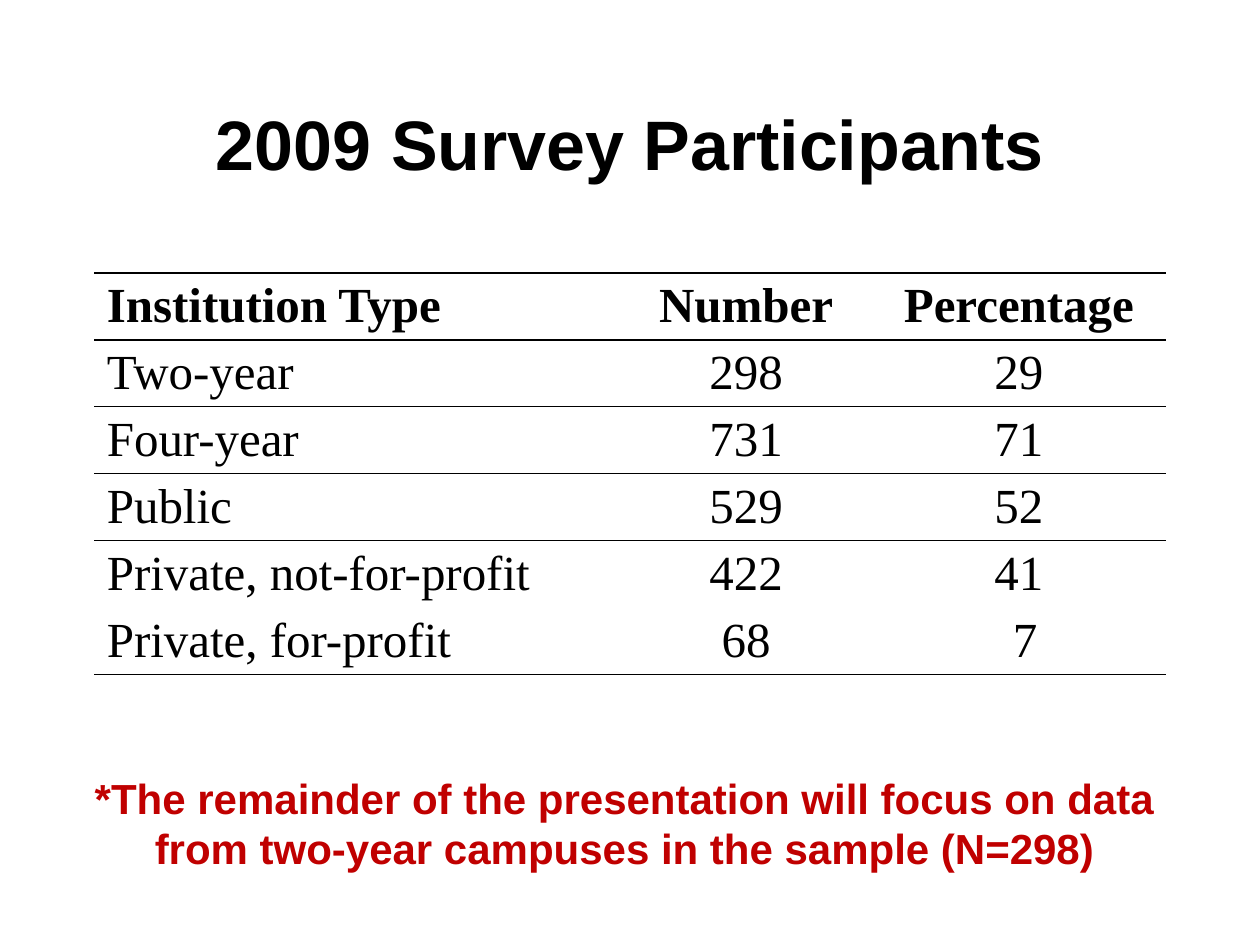
from lxml.etree import SubElement
from pptx import Presentation
from pptx.dml.color import RGBColor
from pptx.enum.text import MSO_ANCHOR as Anchor, MSO_AUTO_SIZE as AutoSize, PP_ALIGN as Align
from pptx.oxml.ns import qn
from pptx.util import Cm, Pt

COLORS = {"ink": "000000", "note": "C00000"}
PLAIN_TABLE = "{2D5ABB26-0587-4C30-8999-92F81FD0307C}"
THICK, THIN = 1, 0.5

HEADER = ("Institution Type", "Number", "Percentage")
RESULTS = [
    ("Two-year", "298", "29"),
    ("Four-year", "731", "71"),
    ("Public", "529", "52"),
    ("Private, not-for-profit", "422", "41"),
    ("Private, for-profit", "68", " 7"),
]
RULES = [THICK, THICK, THIN, THIN, THIN, None, THICK]
COLUMN_WIDTHS = (10.6, 5.08, 5.92)


class SurveySlide:
    heading_font = "Arial"
    table_font = "Times New Roman"

    def __init__(self, presentation):
        self.slide = presentation.slides.add_slide(presentation.slide_layouts[5])

    def set_text(self, frame, text, font, size, color="ink", bold=False, align=Align.CENTER):
        frame.text = text
        paragraph = frame.paragraphs[0]
        paragraph.alignment = align
        paragraph.font.name = font
        paragraph.font.size = Pt(size)
        paragraph.font.bold = bold
        paragraph.font.color.rgb = RGBColor.from_string(COLORS[color])

    def title(self, text, left, top, width, height):
        shape = self.slide.shapes.title
        shape.left, shape.top, shape.width, shape.height = map(Cm, (left, top, width, height))
        frame = shape.text_frame
        frame.auto_size = AutoSize.NONE
        frame.vertical_anchor = Anchor.TOP
        self.set_text(frame, text, self.heading_font, 40, bold=True)

    def border(self, cell, side, width):
        line = SubElement(cell._tc.get_or_add_tcPr(), qn(f"a:{side}"))
        if width is None:
            SubElement(line, qn("a:noFill"))
            return
        line.set("w", str(Pt(width)))
        fill = SubElement(line, qn("a:solidFill"))
        SubElement(fill, qn("a:srgbClr"), val=COLORS["ink"])

    def table(self, rows, rules, left, top, widths, row_height):
        frame = self.slide.shapes.add_table(
            len(rows), len(widths), Cm(left), Cm(top),
            Cm(sum(widths)), Cm(row_height * len(rows)))
        table = frame.table
        table.horz_banding = False
        table._tbl.tblPr.find(qn("a:tableStyleId")).text = PLAIN_TABLE
        for column, width in zip(table.columns, widths):
            column.width = Cm(width)
        for row_index, values in enumerate(rows):
            for column_index, value in enumerate(values):
                cell = table.cell(row_index, column_index)
                align = Align.CENTER if column_index else Align.LEFT
                self.set_text(cell.text_frame, value, self.table_font, 28,
                              bold=row_index == 0, align=align)
                self.border(cell, "lnL", None)
                self.border(cell, "lnR", None)
                self.border(cell, "lnT", rules[row_index])
                self.border(cell, "lnB", rules[row_index + 1])
                cell.fill.background()

    def note(self, text, left, top, width, height):
        shape = self.slide.shapes.add_textbox(Cm(left), Cm(top), Cm(width), Cm(height))
        frame = shape.text_frame
        frame.word_wrap = True
        frame.auto_size = AutoSize.SHAPE_TO_FIT_TEXT
        self.set_text(frame, text, self.heading_font, 24, "note", bold=True)


def main():
    presentation = Presentation()
    presentation.slide_width, presentation.slide_height = Cm(25.4), Cm(19.05)
    survey = SurveySlide(presentation)
    survey.title("2009 Survey Participants", 1.9, 1.9, 21.6, 3.18)
    survey.table([HEADER, *RESULTS], RULES, 1.9, 5.5, COLUMN_WIDTHS, 1.35)
    survey.note("*The remainder of the presentation will focus on data "
                "from two-year campuses in the sample (N=298)", 0.63, 15.45, 23.92, 2.31)
    presentation.save("out.pptx")


if __name__ == "__main__":
    main()
